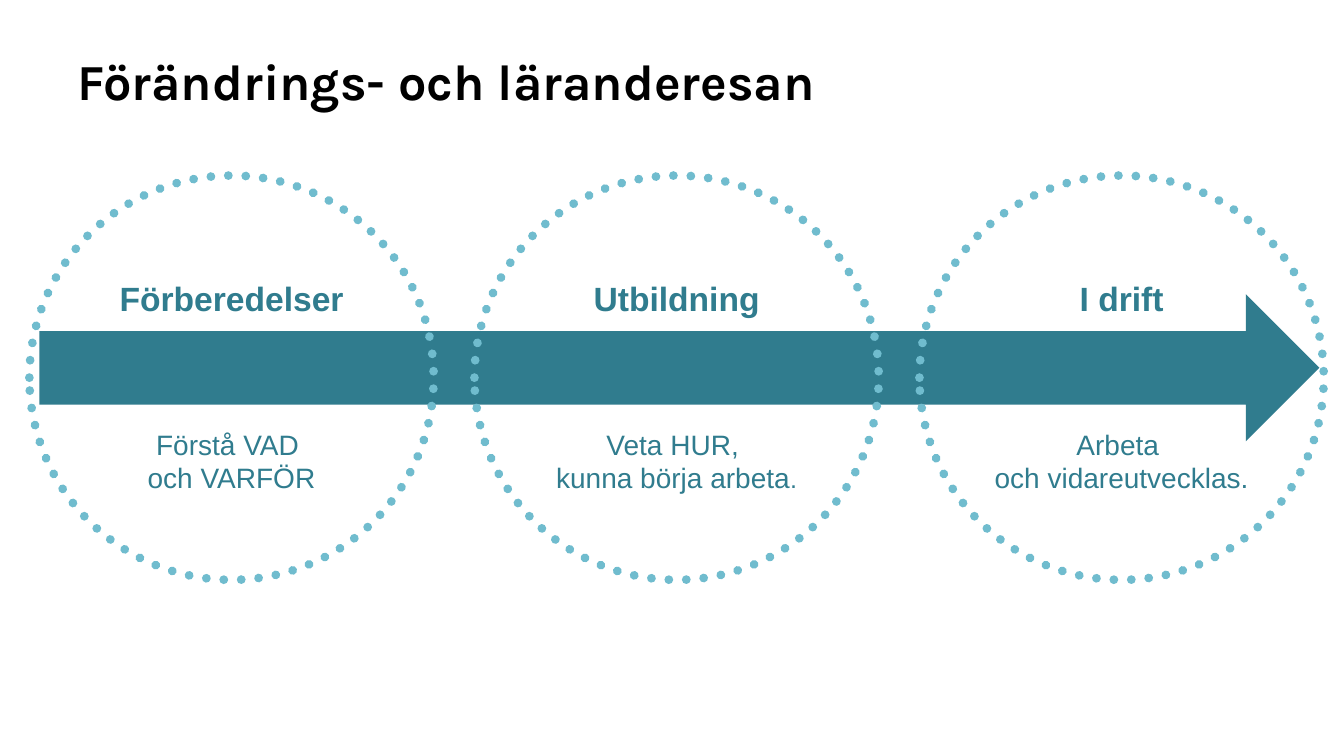
from lxml import etree
from pptx import Presentation
from pptx import util as u
from pptx.dml.color import RGBColor
from pptx.enum import dml, shapes, text

COLORS = {"title": "000000", "teal": "307C8E", "dots": "70BCCE", "background": "FFFFFF"}

# Heading, heading width, caption, caption width, small closing character
STAGES = [
    ("Förberedelser", 204, "Förstå VAD \voch VARFÖR", 225, ""),
    ("Utbildning", 150, "Veta HUR, \vkunna börja arbeta", 263, "."),
    ("I drift", 150, "Arbeta \voch vidareutvecklas.", 231, ""),
]
FIRST_CENTER, STAGE_PITCH = 165.4, 317.9
CIRCLE_TOP, CIRCLE_SIZE = 125.4, 288.8


class JourneySlide:
    """Holds the style and the current slide."""

    def __init__(self, presentation):
        self.slide = presentation.slides.add_slide(presentation.slide_layouts[5])
        fill = self.slide.background.fill
        fill.solid()
        fill.fore_color.rgb = self.color("background")

    def color(self, name):
        return RGBColor.from_string(COLORS[name])

    def style(self, run, size, color="teal", bold=False, name="Arial"):
        run.font.name = name
        run.font.size = u.Pt(size)
        run.font.bold = bold
        run.font.color.rgb = self.color(color)

    def title(self, words, left, top, width, height):
        shape = self.slide.shapes.title
        shape.left, shape.top = u.Pt(left), u.Pt(top)
        shape.width, shape.height = u.Pt(width), u.Pt(height)
        frame = shape.text_frame
        frame.text = words
        frame.vertical_anchor = text.MSO_ANCHOR.TOP
        paragraph = frame.paragraphs[0]
        paragraph.alignment = text.PP_ALIGN.LEFT
        paragraph.line_spacing = 1.1
        self.style(paragraph.runs[0], 36, "title", True, "Karla")

    def arrow(self, left, top, width, height):
        shape = self.slide.shapes.add_shape(
            shapes.MSO_SHAPE.RIGHT_ARROW, u.Pt(left), u.Pt(top), u.Pt(width), u.Pt(height))
        shape.shadow.inherit = False
        shape.fill.solid()
        shape.fill.fore_color.rgb = self.color("teal")
        shape.line.fill.background()

    def label(self, words, center, top, width, height, size, bold=False, ending=""):
        shape = self.slide.shapes.add_textbox(
            u.Pt(center - width / 2), u.Pt(top), u.Pt(width), u.Pt(height))
        frame = shape.text_frame
        frame.word_wrap = True
        frame.auto_size = text.MSO_AUTO_SIZE.SHAPE_TO_FIT_TEXT
        paragraph = frame.paragraphs[0]
        paragraph.text = words
        paragraph.alignment = text.PP_ALIGN.CENTER
        for run in paragraph.runs:
            self.style(run, size, bold=bold)
        if ending:
            run = paragraph.add_run()
            run.text = ending
            self.style(run, 18, bold=bold)

    def dotted_circle(self, center, top, size):
        shape = self.slide.shapes.add_shape(
            shapes.MSO_SHAPE.OVAL, u.Pt(center - size / 2), u.Pt(top), u.Pt(size), u.Pt(size))
        shape.shadow.inherit = False
        shape.fill.background()
        shape.line.color.rgb = self.color("dots")
        shape.line.width = u.Pt(6.25)
        shape.line.dash_style = dml.MSO_LINE.ROUND_DOT
        # Round caps turn the dashes into dots
        for line in etree.ElementBase.iter(shape.element, "{*}ln"):
            line.set("cap", "rnd")


def main():
    presentation = Presentation()
    presentation.slide_width, presentation.slide_height = u.Pt(960), u.Pt(540)
    journey = JourneySlide(presentation)
    centers = [FIRST_CENTER + STAGE_PITCH * index for index in range(len(STAGES))]

    # Title and arrow
    journey.title("Förändrings- och läranderesan", 48, 28, 864, 90)
    journey.arrow(28.1, 210.2, 914.4, 105.1)

    # Stage headings
    for center, (heading, width, *_) in zip(centers, STAGES):
        journey.label(heading, center, 195.1, width, 36, 24, bold=True)

    # Stage captions
    for center, (_, _, caption, width, ending) in zip(centers, STAGES):
        journey.label(caption, center, 301.7, width, 55.4, 20, ending=ending)

    # Circles on top of the arrow
    for center in centers:
        journey.dotted_circle(center, CIRCLE_TOP, CIRCLE_SIZE)

    presentation.save("out.pptx")


if __name__ == "__main__":
    main()
